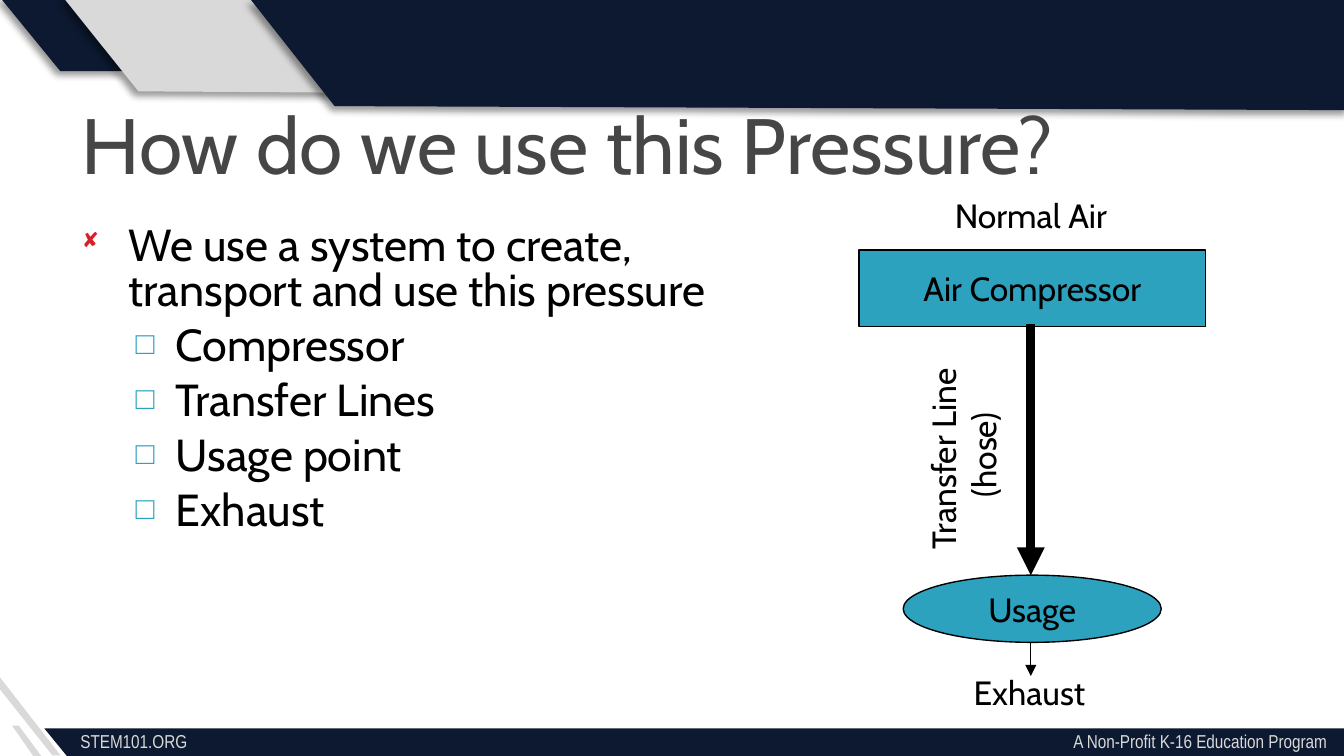
from lxml import etree
from pptx import Presentation
from pptx.dml.color import RGBColor
from pptx.enum.shapes import MSO_CONNECTOR, MSO_SHAPE
from pptx.enum.text import MSO_ANCHOR, PP_ALIGN
from pptx.oxml.ns import qn
from pptx.util import Inches, Pt

LEFT, CENTER, RIGHT = PP_ALIGN.LEFT, PP_ALIGN.CENTER, PP_ALIGN.RIGHT
TOP, MIDDLE = MSO_ANCHOR.TOP, MSO_ANCHOR.MIDDLE
RECTANGLE, ELLIPSE = MSO_SHAPE.RECTANGLE, MSO_SHAPE.OVAL
STRAIGHT = MSO_CONNECTOR.STRAIGHT

NAVY, GREY, TEAL, RED = "0C1930", "D9D9D9", "2DA2BF", "DA1F28"
BLACK, TITLE_GREY = "000000", "464646"

# Outlines in hundredths of an inch: fill, casts a shadow, corners
BANDS = [
    (NAVY, True, [(45, 53), (0, -2), (48, -2), (93, 53)]),
    (GREY, True, [(103, 68), (47, -2), (204, -2), (259, 69)]),
    (GREY, False, [(31, 563), (25, 563), (9, 540), (14, 540)]),
    (GREY, False, [(45, 562), (39, 562), (0, 513), (0, 504)]),
    (NAVY, True, [(249, 79), (186, -1), (1002, -1), (1004, 82)]),
    (NAVY, False, [(1006, 565), (51, 564), (33, 542), (1007, 542)]),
]
FOOTERS = [("STEM101.ORG", LEFT), ("A Non-Profit K-16 Education Program", RIGHT)]
TITLE = "How do we use this Pressure?"
LEAD = "We use a system to create, transport and use this pressure"
PARTS = ["Compressor", "Transfer Lines", "Usage point", "Exhaust"]
LEVELS = [
    {"level": 0, "indent": (0.35, -0.35), "before": 7,
     "bullet": "◻", "font": "Wingdings", "color": RED, "percent": 60},
    {"level": 1, "indent": (0.7, -0.3), "before": 5.5,
     "bullet": "□", "font": "Arial", "color": TEAL, "percent": 70},
]

# Flow diagram: everything hangs on one vertical axis
AXIS = 7.68
STATIONS = [
    ("Air Compressor", RECTANGLE, 1.86, 2.58, 0.57),
    ("Usage", ELLIPSE, 4.28, 1.92, 0.5),
]
ARROWS = [(2.41, 4.28, 5), (4.78, 5.03, 0.75)]
LABELS = [  # lines, centre x, top, width, height, rotation
    (["Normal Air"], 7.67, 1.4, 2.56, 0.4, 0),
    (["Transfer Line", " (hose)"], 7.17, 3.06, 2.38, 0.71, -90),
    (["Exhaust"], 7.66, 4.95, 2.5, 0.4, 0),
]


def rgb(value):
    return RGBColor.from_string(value)


def add_xml(parent, tag, **attributes):
    return etree.SubElement(parent, qn(tag), attributes)


def cast_shadow(shape):
    effects = add_xml(shape._element.spPr, "a:effectLst")
    shadow = add_xml(effects, "a:outerShdw", blurRad=str(Pt(4)), dist=str(Pt(3)),
                     dir="8100000", algn="tr", rotWithShape="0")
    add_xml(add_xml(shadow, "a:srgbClr", val=BLACK), "a:alpha", val="40000")


def write(shape, lines, size, color=BLACK, font="Cabin", align=LEFT,
          anchor=TOP, wrap=True, spacing=None):
    """Fill a shape with one paragraph per line and return the paragraphs."""
    frame = shape.text_frame
    frame.word_wrap, frame.vertical_anchor = wrap, anchor
    frame.text = "\n".join(lines)
    for paragraph in frame.paragraphs:
        paragraph.alignment = align
        if spacing:
            paragraph.line_spacing = Pt(spacing)
        run_font = paragraph.runs[0].font
        for name, value in {"name": font, "size": Pt(size)}.items():
            setattr(run_font, name, value)
        run_font.color.rgb = rgb(color)
    return frame.paragraphs


def add_text(shapes, box, lines, size, **style):
    shape = shapes.add_textbox(*map(Inches, box))
    return shape, write(shape, lines, size, **style)


def add_bullet(paragraph, look, first):
    paragraph.level = look["level"]
    if not first:
        paragraph.space_before = Pt(look["before"])
    properties = paragraph._p.get_or_add_pPr()
    for name, value in zip(("marL", "indent"), look["indent"]):
        properties.set(name, str(Inches(value)))
    add_xml(add_xml(properties, "a:buClr"), "a:srgbClr", val=look["color"])
    add_xml(properties, "a:buSzPct", val=str(look["percent"] * 1000))
    add_xml(properties, "a:buFont", typeface=look["font"])
    add_xml(properties, "a:buChar", char=look["bullet"])


def draw_bands(shapes):
    for fill, shadowed, (start, *corners) in BANDS:
        outline = shapes.build_freeform(*start, scale=Inches(0.01))
        outline.add_line_segments(corners, close=True)
        band = outline.convert_to_shape()
        band.fill.solid()
        band.fill.fore_color.rgb = rgb(fill)
        band.line.fill.background()
        if shadowed:
            cast_shadow(band)
        else:
            band.shadow.inherit = False


def draw_text(shapes):
    for text, align in FOOTERS:
        add_text(shapes, (0.5, 5.38, 9.47, 0.27), [text], 10,
                 color=GREY, font="Arial Narrow", align=align)
    add_text(shapes, (0.51, 0.81, 9.33, 0.8), [TITLE], 42, color=TITLE_GREY, spacing=40)
    _, paragraphs = add_text(shapes, (0.51, 1.63, 4.95, 3.38), [LEAD, *PARTS], 24, spacing=24)
    for index, paragraph in enumerate(paragraphs):
        add_bullet(paragraph, LEVELS[min(index, 1)], index == 0)


def draw_flow(shapes):
    for text, kind, top, width, height in STATIONS:
        box = (AXIS - width / 2, top, width, height)
        station = shapes.add_shape(kind, *map(Inches, box))
        station.shadow.inherit = False
        station.fill.solid()
        station.fill.fore_color.rgb = rgb(TEAL)
        station.line.color.rgb = rgb(BLACK)
        station.line.width = Pt(0.75)
        write(station, [text], 18, align=CENTER, anchor=MIDDLE, wrap=False)
    for start, end, weight in ARROWS:
        arrow = shapes.add_connector(STRAIGHT, *map(Inches, (7.67, start, 7.67, end)))
        arrow.line.color.rgb = rgb(BLACK)
        arrow.line.width = Pt(weight)
        add_xml(arrow.line._get_or_add_ln(), "a:tailEnd", type="triangle")
        add_xml(arrow._element.spPr, "a:effectLst")
    for lines, middle, top, width, height, rotation in LABELS:
        label, _ = add_text(shapes, (middle - width / 2, top, width, height), lines, 18,
                            align=CENTER)
        label.rotation = rotation


def main():
    deck = Presentation()
    deck.slide_width = Inches(10)
    deck.slide_height = deck.slide_width * 9 // 16
    shapes = deck.slides.add_slide(deck.slide_layouts[6]).shapes
    draw_bands(shapes)
    draw_text(shapes)
    draw_flow(shapes)
    deck.save("out.pptx")


if __name__ == "__main__":
    main()
